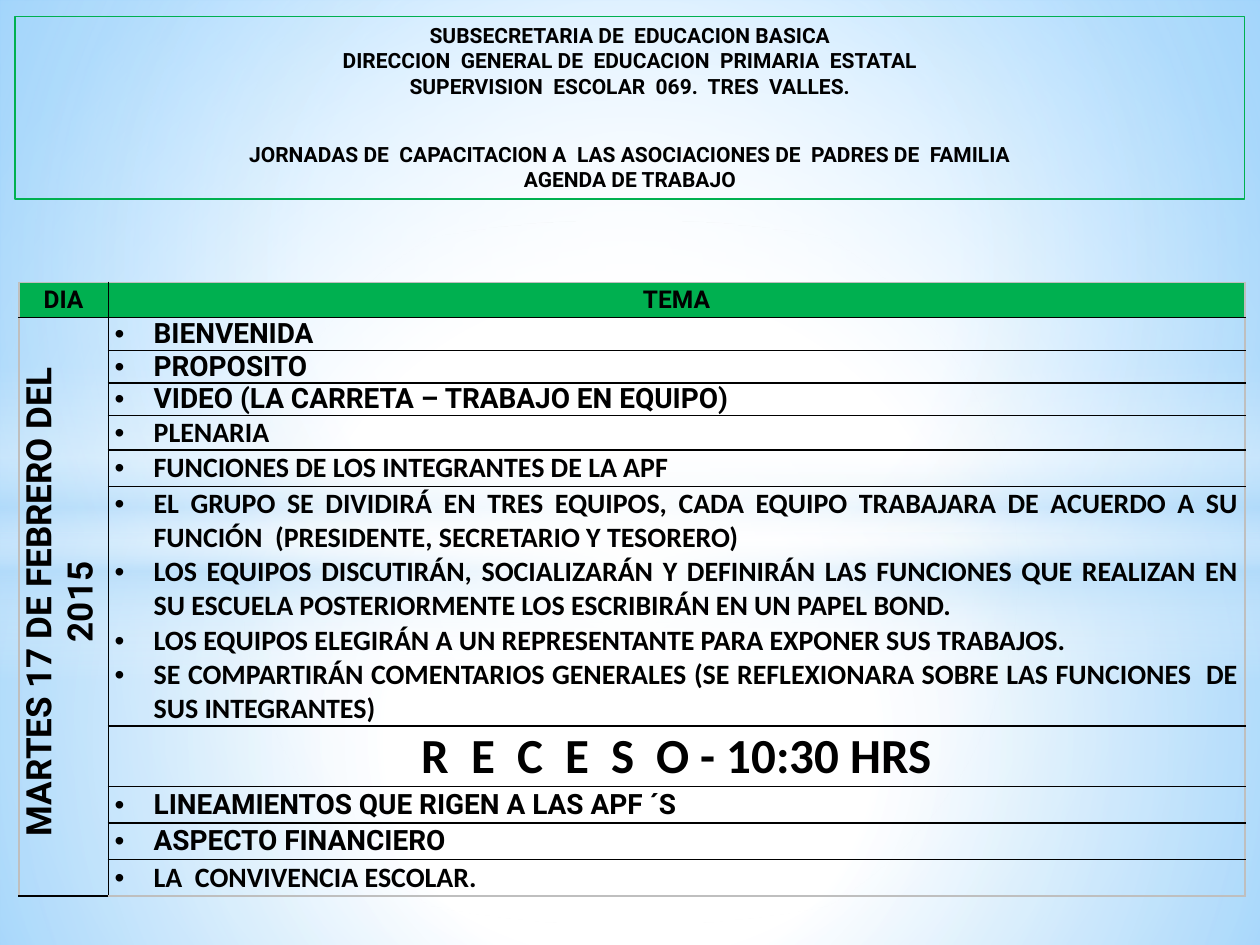
from dataclasses import dataclass
from typing import Optional

from lxml.etree import SubElement
from pptx import Presentation
from pptx.dml.color import RGBColor
from pptx.enum.shapes import MSO_SHAPE
from pptx.enum.text import MSO_ANCHOR, MSO_AUTO_SIZE, PP_ALIGN
from pptx.oxml import parse_xml
from pptx.oxml.ns import nsdecls, qn
from pptx.util import Emu, Inches, Pt

COLORS = {
    "black": "000000",
    "white": "FFFFFF",
    "green": "00B050",
    "sky": "63BCFF",
    "pale": "B4DCFA",
    "edge": "BFBFBF",
}
CENTER = (50, 50, 50, 50)


@dataclass(frozen=True)
class Stop:
    position: int
    color: str
    opacity: int = 100


@dataclass(frozen=True)
class Glow:
    kind: MSO_SHAPE
    left: float
    top: float
    width: float
    height: float
    stops: tuple[Stop, ...]
    focus: Optional[tuple[int, ...]] = CENTER


@dataclass(frozen=True)
class Topic:
    height: float
    lines: tuple[str, ...]
    font: str = "Roboto"
    size: int = 16
    align: PP_ALIGN = PP_ALIGN.LEFT
    bullet: bool = True


GLOWS = (
    Glow(MSO_SHAPE.RECTANGLE, 0, 4.23, 10, 3.27,
         (Stop(0, "white", 91), Stop(37, "white", 76), Stop(100, "pale", 79))),
    Glow(MSO_SHAPE.RECTANGLE, 0, 0, 10, 4.23,
         (Stop(0, "white", 89), Stop(48, "white", 62), Stop(100, "pale", 79))),
    Glow(MSO_SHAPE.RECTANGLE, 0, 2.9, 10, 2.5,
         (Stop(0, "white", 0), Stop(29, "white", 30), Stop(45, "pale", 40),
          Stop(55, "white", 26), Stop(65, "pale", 60), Stop(100, "white", 0)), None),
    Glow(MSO_SHAPE.OVAL, 0, 1.75, 10, 5.58, (Stop(0, "white"), Stop(54, "white", 0))),
)
HEADING = (
    "SUBSECRETARIA DE  EDUCACION BASICA",
    "DIRECCION  GENERAL DE  EDUCACION  PRIMARIA  ESTATAL",
    "SUPERVISION  ESCOLAR  069.  TRES  VALLES.",
    "JORNADAS DE  CAPACITACION A  LAS ASOCIACIONES DE  PADRES DE  FAMILIA",
    "AGENDA DE TRABAJO",
)
TOPICS = (
    Topic(0.26, ("BIENVENIDA",)),
    Topic(0.26, ("PROPOSITO",)),
    Topic(0.26, ("VIDEO (LA CARRETA – TRABAJO EN EQUIPO)",)),
    Topic(0.27, ("PLENARIA",), "Calibri"),
    Topic(0.29, ("FUNCIONES DE LOS INTEGRANTES DE LA APF",), "Calibri"),
    Topic(1.9, (
        "EL GRUPO SE DIVIDIRÁ EN TRES EQUIPOS, CADA EQUIPO TRABAJARA DE ACUERDO A SU "
        "FUNCIÓN  (PRESIDENTE, SECRETARIO Y TESORERO)",
        "LOS EQUIPOS DISCUTIRÁN, SOCIALIZARÁN Y DEFINIRÁN LAS FUNCIONES QUE REALIZAN EN "
        "SU ESCUELA POSTERIORMENTE LOS ESCRIBIRÁN EN UN PAPEL BOND.",
        "LOS EQUIPOS ELEGIRÁN A UN REPRESENTANTE PARA EXPONER SUS TRABAJOS.",
        "SE COMPARTIRÁN COMENTARIOS GENERALES (SE REFLEXIONARA SOBRE LAS FUNCIONES  DE "
        "SUS INTEGRANTES)",
    ), "Calibri", align=PP_ALIGN.JUSTIFY),
    Topic(0.48, ("R  E  C  E  S  O - 10:30 HRS",), "Calibri", 28, PP_ALIGN.CENTER, False),
    Topic(0.29, ("LINEAMIENTOS QUE RIGEN A LAS APF ´S",)),
    Topic(0.29, ("ASPECTO FINANCIERO",)),
    Topic(0.29, ("LA  CONVIVENCIA ESCOLAR.",), "Calibri"),
)


def set_gradient(fill, properties, stops: tuple[Stop, ...],
                 focus: Optional[tuple[int, ...]]) -> None:
    fill.solid()
    stop_xml = "".join(
        f'<a:gs pos="{stop.position * 1000}"><a:srgbClr val="{COLORS[stop.color]}">'
        f'<a:alpha val="{stop.opacity * 1000}"/></a:srgbClr></a:gs>'
        for stop in stops
    )
    direction = '<a:lin ang="5400000" scaled="0"/>'
    if focus:
        sides = " ".join(f'{side}="{value * 1000}"' for side, value in zip("ltrb", focus))
        direction = f'<a:path path="circle"><a:fillToRect {sides}/></a:path>'
    gradient = parse_xml(f'<a:gradFill {nsdecls("a")} rotWithShape="1">'
                         f"<a:gsLst>{stop_xml}</a:gsLst>{direction}</a:gradFill>")
    properties.replace(properties.find(qn("a:solidFill")), gradient)


def add_glow(slide, glow: Glow) -> None:
    shape = slide.shapes.add_shape(glow.kind, Inches(glow.left), Inches(glow.top),
                                   Inches(glow.width), Inches(glow.height))
    shape.shadow.inherit = False
    shape.line.fill.background()
    set_gradient(shape.fill, shape.element.spPr, glow.stops, glow.focus)


def write_lines(text_frame, lines: tuple[str, ...], font: str, size: int,
                align: PP_ALIGN = PP_ALIGN.CENTER) -> None:
    text_frame.text = "\n".join(lines)
    for paragraph in text_frame.paragraphs:
        paragraph.alignment = align
        for run in paragraph.runs:
            run.font.name = font
            run.font.size = Pt(size)
            run.font.bold = True
            run.font.color.rgb = RGBColor.from_string(COLORS["black"])


def add_bullet(paragraph) -> None:
    properties = paragraph._p.get_or_add_pPr()
    properties.set("marL", str(Inches(0.31)))
    properties.set("indent", str(-Inches(0.31)))
    SubElement(properties, qn("a:buFont"), typeface="Arial")
    SubElement(properties, qn("a:buChar"), char="•")


def format_cell(cell, edges: dict[str, str], fill: Optional[str] = None) -> None:
    cell.vertical_anchor = MSO_ANCHOR.MIDDLE
    cell.margin_left = cell.margin_right = Inches(0.05)
    cell.margin_top = cell.margin_bottom = 0
    properties = cell._tc.get_or_add_tcPr()
    for side, color in edges.items():
        border = SubElement(properties, qn(f"a:ln{side}"), w=str(Pt(1)))
        SubElement(SubElement(border, qn("a:solidFill")), qn("a:srgbClr"), val=COLORS[color])
    if fill:
        cell.fill.solid()
        cell.fill.fore_color.rgb = RGBColor.from_string(COLORS[fill])
    else:
        cell.fill.background()


def add_agenda(slide) -> None:
    heights = [0.28] + [topic.height for topic in TOPICS]
    widths = (0.71, 9.02)
    last_row = len(heights) - 1
    table = slide.shapes.add_table(len(heights), 2, Inches(0.15), Inches(2.24),
                                   Inches(sum(widths)), Inches(sum(heights))).table
    table.first_row = table.horz_banding = False
    for column, width in zip(table.columns, widths):
        column.width = Inches(width)
    for index, height in enumerate(heights):
        table.rows[index].height = Inches(height)
        for column in range(2):
            edges = {
                "L": "black" if column else "edge",
                "R": "edge" if column else "black",
                "T": "black" if index else "edge",
                "B": "edge" if index == last_row else "black",
            }
            format_cell(table.cell(index, column), edges, None if index else "green")

    for column, label in enumerate(("DIA", "TEMA")):
        write_lines(table.cell(0, column).text_frame, (label,), "Roboto", 14)
    for index, topic in enumerate(TOPICS, start=1):
        text_frame = table.cell(index, 1).text_frame
        write_lines(text_frame, topic.lines, topic.font, topic.size, topic.align)
        if topic.bullet:
            for paragraph in text_frame.paragraphs:
                add_bullet(paragraph)

    day = table.cell(1, 0)
    day.merge(table.cell(last_row, 0))
    write_lines(day.text_frame, ("MARTES 17 DE FEBRERO DEL 2015",), "Roboto", 20)
    day.text_frame.paragraphs[0]._p.get_or_add_pPr().set("marL", str(Inches(0.08)))
    day._tc.get_or_add_tcPr().set("vert", "vert270")


def format_heading(slide) -> None:
    title = slide.shapes.title
    title.left, title.top = Inches(0.12), Inches(0.13)
    title.width, title.height = Inches(9.76), Inches(1.45)
    title.line.color.rgb = RGBColor.from_string(COLORS["green"])
    title.line.width = Pt(0.75)
    text_frame = title.text_frame
    text_frame.auto_size = MSO_AUTO_SIZE.NONE
    text_frame.vertical_anchor = MSO_ANCHOR.TOP
    write_lines(text_frame, HEADING, "Roboto", 12)
    text_frame.paragraphs[3].space_before = Pt(24.5)
    slide.shapes.element.append(title.element)


def main() -> None:
    presentation = Presentation()
    presentation.slide_width, presentation.slide_height = Inches(10), Inches(7.5)
    slide = presentation.slides.add_slide(presentation.slide_layouts[5])
    background_fill = slide.background.fill
    set_gradient(background_fill, slide.element.find(f".//{qn('p:bgPr')}"),
                 (Stop(0, "white"), Stop(42, "white"), Stop(100, "sky")), (24, 44, 24, 12))
    for glow in GLOWS:
        add_glow(slide, glow)
    add_agenda(slide)
    format_heading(slide)
    presentation.save("out.pptx")


if __name__ == "__main__":
    main()
